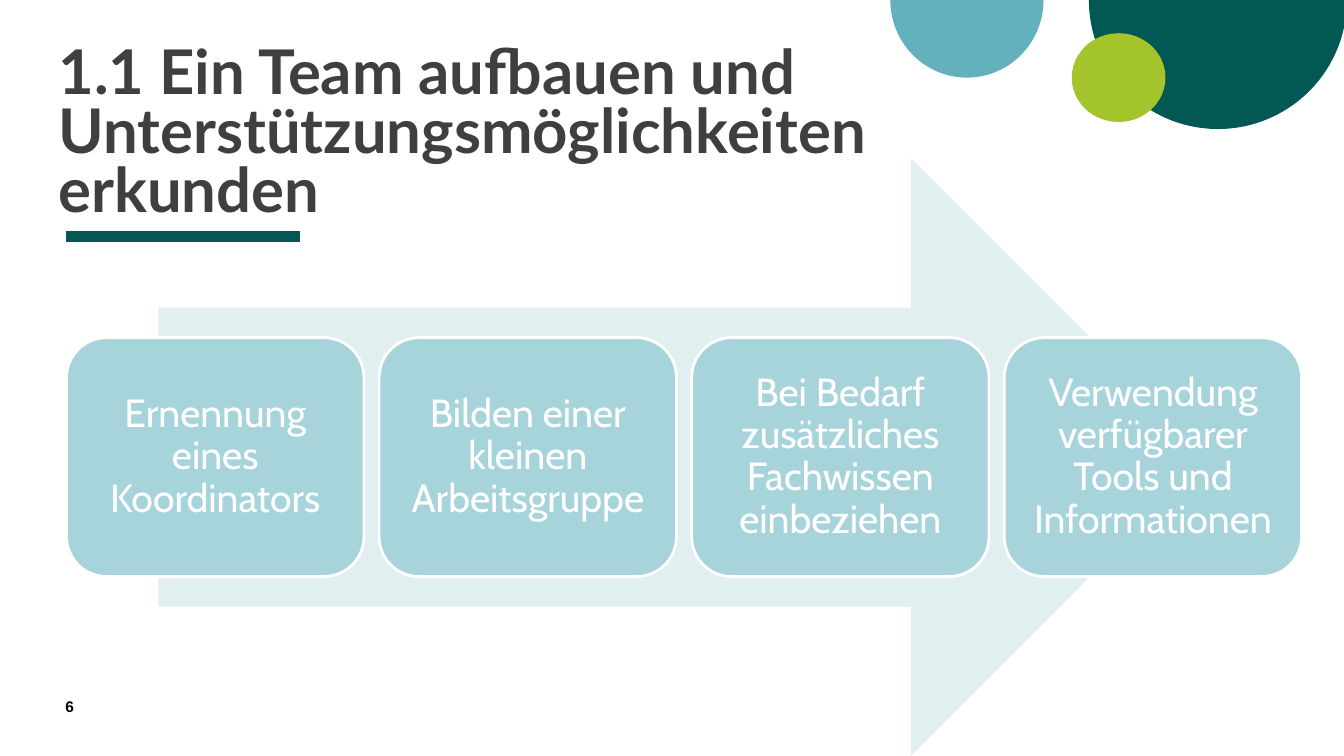
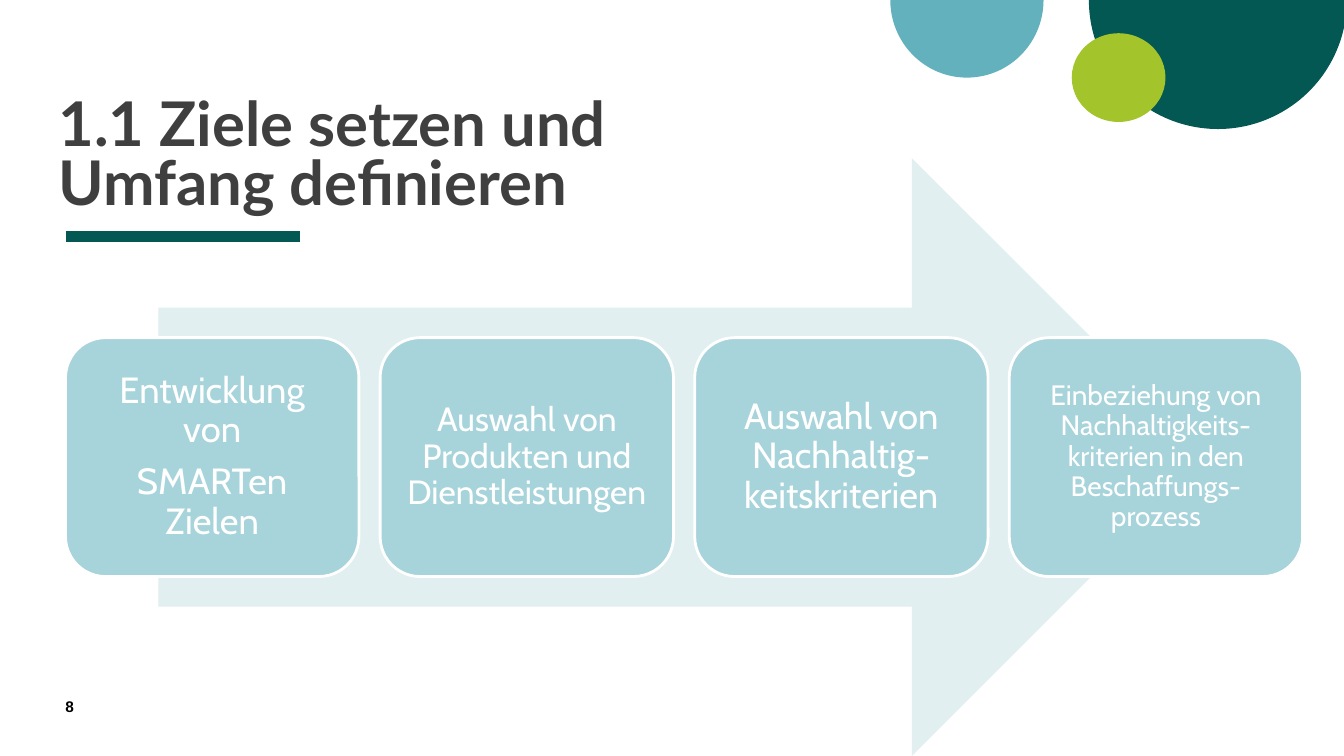
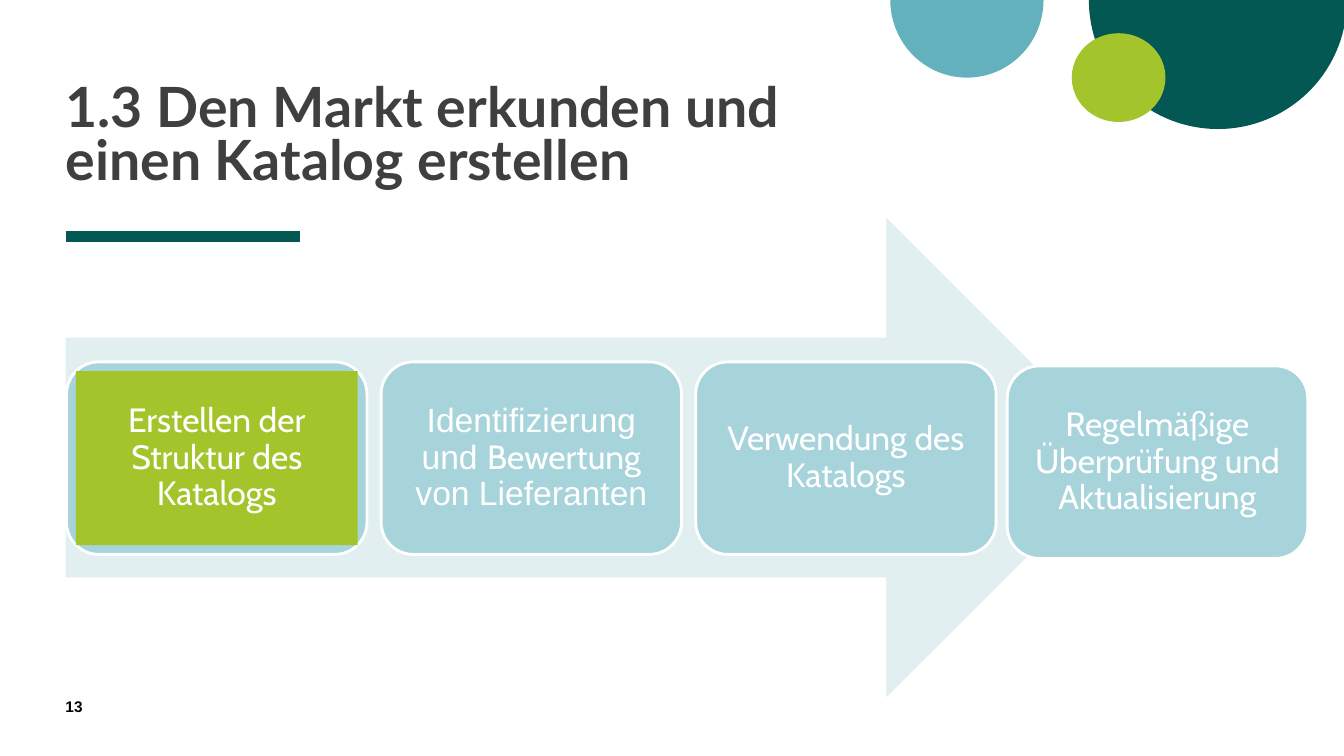
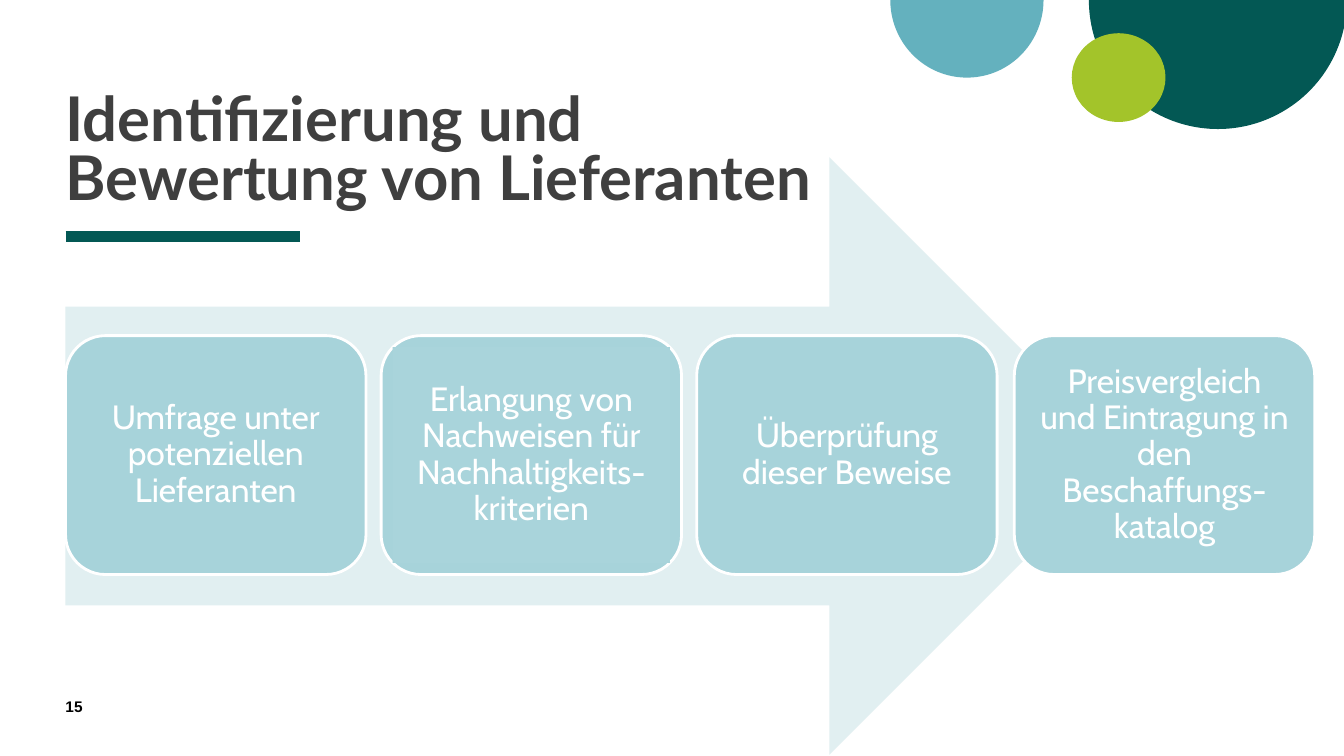
from dataclasses import dataclass
from typing import Optional

from lxml.etree import SubElement
from pptx import Presentation
from pptx.dml.color import RGBColor
from pptx.enum.shapes import MSO_CONNECTOR, MSO_SHAPE as Geo
from pptx.enum.text import MSO_ANCHOR as Anchor, MSO_AUTO_SIZE, PP_ALIGN as Align
from pptx.oxml.ns import qn
from pptx.util import Inches, Pt

WHITE = "FFFFFF"
BLACK = "000000"
GREY = "3F3F3F"
DARK = "035854"
TEAL = "64B1BE"
LIME = "A3C42A"
PALE = "E1EFF1"
CARD = "A7D3DA"
CARD_PANEL = "A9D4DB"
CORNER = 0.167
PANEL_INSET = CORNER * 0.29
TEXT_INSET = 0.11


@dataclass(frozen=True)
class Box:
    x: float
    y: float
    w: float
    h: float

    def inset(self, d: float) -> "Box":
        return Box(self.x + d, self.y + d, self.w - 2 * d, self.h - 2 * d)


@dataclass(frozen=True)
class Span:
    text: str
    font: str = "Cabin"


@dataclass(frozen=True)
class Card:
    paras: tuple[tuple[Span, ...], ...]
    size: float = 24
    panel: Optional[str] = None
    dx: float = 0
    dy: float = 0


@dataclass(frozen=True)
class Process:
    number: int
    title: str
    title_box: Box
    arrow: Box
    first: Box
    pitch: float
    cards: tuple[Card, ...]
    title_size: float = 44


def card(*lines: str, size: float = 24, panel: Optional[str] = None,
         dx: float = 0, dy: float = 0) -> Card:
    return Card(tuple((Span(t),) for t in lines), size, panel, dx, dy)


PROCESSES = (
    Process(
        6, "1.1 Ein Team aufbauen und Unterstützungsmöglichkeiten erkunden",
        Box(0.58, 0.17, 8.72, 2.06), Box(1.57, 1.57, 10.43, 5.93),
        Box(0.66, 3.35, 2.95, 2.37), 3.1,
        (
            card("Ernennung eines Koordinators", size=28),
            card("Bilden einer kleinen Arbeitsgruppe", size=28),
            card("Bei Bedarf zusätzliches Fachwissen einbeziehen", size=28),
            card("Verwendung verfügbarer Tools und Informationen", size=28),
        ),
    ),
    Process(
        8, "1.1 Ziele setzen und Umfang definieren",
        Box(0.58, 0.42, 7.42, 1.74), Box(1.57, 1.57, 10.44, 5.93),
        Box(0.65, 3.35, 2.91, 2.37), 3.12,
        (
            card("Entwicklung von", "SMARTen Zielen", size=26),
            card("Auswahl von Produkten und Dienstleistungen"),
            card("Auswahl von Nachhaltig-keitskriterien", size=26),
            card("Einbeziehung von Nachhaltigkeits-kriterien in den "
                 "Beschaffungs-prozess", size=20),
        ),
    ),
    Process(
        13, "1.3 Den Markt erkunden und einen Katalog erstellen",
        Box(0.65, 0.75, 7.42, 1.15), Box(0.65, 2.16, 10.52, 4.76),
        Box(0.66, 3.59, 2.98, 1.91), 3.12,
        (
            card("Erstellen der Struktur des Katalogs", panel=LIME),
            Card(((Span("Identifizierung und ", "Arial"), Span("Bewertung"),
                   Span(" von Lieferanten", "Arial")),)),
            card("Verwendung des Katalogs"),
            card("Regelmäßige Überprüfung und Aktualisierung", dx=-0.03, dy=0.04),
        ),
        39.6,
    ),
    Process(
        15, "Identifizierung und Bewertung von Lieferanten",
        Box(0.65, 0.37, 7.42, 1.74), Box(0.65, 1.56, 10.54, 5.93),
        Box(0.65, 3.33, 2.98, 2.37), 3.13,
        (
            card("Umfrage unter potenziellen Lieferanten"),
            card("Erlangung von Nachweisen für Nachhaltigkeits-kriterien",
                 panel=CARD_PANEL),
            card("Überprüfung dieser Beweise"),
            card("Preisvergleich und Eintragung in den Beschaffungs-katalog",
                 dx=0.02),
        ),
    ),
)


def rgb(color: str) -> RGBColor:
    return RGBColor.from_string(color)


def emu(box: Box) -> tuple[Inches, ...]:
    return tuple(Inches(v) for v in (box.x, box.y, box.w, box.h))


def add_shape(s, geo, box: Box, fill: str, line: Optional[str] = None,
              adj: tuple[float, ...] = ()):
    sp = s.shapes.add_shape(geo, *emu(box))
    sp.shadow.inherit = False
    sp.fill.solid()
    sp.fill.fore_color.rgb = rgb(fill)
    if line:
        sp.line.color.rgb = rgb(line)
        sp.line.width = Pt(2)
    else:
        sp.line.fill.background()
    for i, value in enumerate(adj):
        sp.adjustments[i] = value
    return sp


def set_frame(tf, inset: float, anchor) -> None:
    tf.word_wrap = True
    tf.auto_size = MSO_AUTO_SIZE.NONE
    tf.vertical_anchor = anchor
    tf.margin_left = tf.margin_right = Inches(inset)
    tf.margin_top = tf.margin_bottom = Inches(inset)


def add_run(p, text: str, font: str, size: float, color: str, bold: bool = False) -> None:
    r = p.add_run()
    r.text = text
    r.font.name = font
    r.font.size = Pt(size)
    r.font.bold = bold
    r.font.color.rgb = rgb(color)


def add_decoration(s, layout) -> None:
    big = add_shape(s, Geo.PIE, Box(10.8, -1.28, 2.56, 2.56), DARK, adj=(0, 107.956))
    rule = s.shapes.add_connector(MSO_CONNECTOR.STRAIGHT, Inches(0.65), Inches(2.35),
                                  Inches(2.98), Inches(2.35))
    rule.line.color.rgb = rgb(DARK)
    rule.line.width = Pt(8)
    SubElement(rule.element.spPr, qn("a:effectLst"))
    mid = add_shape(s, Geo.PIE, Box(8.83, -0.77, 1.52, 1.54), TEAL, adj=(0, 108.518))
    small = add_shape(s, Geo.OVAL, Box(10.63, 0.33, 0.93, 0.88), LIME)
    for sp in (big, rule, mid, small):
        layout.shapes.element.append(sp.element)


def add_title(s, process: Process) -> None:
    title = s.shapes.title
    title.left, title.top, title.width, title.height = emu(process.title_box)
    set_frame(title.text_frame, 0, Anchor.BOTTOM)
    p = title.text_frame.paragraphs[0]
    p.alignment = Align.LEFT
    p.line_spacing = 0.8
    add_run(p, process.title, "Lato", process.title_size, GREY, True)


def add_number(s, number: int) -> None:
    tf = s.shapes.add_textbox(*emu(Box(0.65, 6.92, 0.57, 0.27))).text_frame
    set_frame(tf, 0, Anchor.TOP)
    add_run(tf.paragraphs[0], str(number), "Arial", 11, BLACK, True)


def add_card(s, item: Card, box: Box) -> None:
    sp = add_shape(s, Geo.ROUNDED_RECTANGLE, box, CARD, WHITE, (CORNER,))
    if item.panel:
        sp = add_shape(s, Geo.RECTANGLE, box.inset(PANEL_INSET * box.h), item.panel)
    tf = sp.text_frame
    set_frame(tf, TEXT_INSET, Anchor.MIDDLE)
    for i, spans in enumerate(item.paras):
        p = tf.add_paragraph() if i else tf.paragraphs[0]
        p.alignment = Align.CENTER
        p.line_spacing = 0.9
        if i:
            p.space_before = Pt(9.1)
        for span in spans:
            add_run(p, span.text, span.font, item.size, WHITE)


def add_process(s, process: Process) -> None:
    add_title(s, process)
    add_number(s, process.number)
    add_shape(s, Geo.RIGHT_ARROW, process.arrow, PALE, adj=(0.5, 0.5))
    first = process.first
    for i, item in enumerate(process.cards):
        x = first.x + i * process.pitch + item.dx
        add_card(s, item, Box(x, first.y + item.dy, first.w, first.h))


def main() -> None:
    prs = Presentation()
    prs.slide_width = Inches(13.33)
    prs.slide_height = Inches(7.5)
    layout = prs.slide_layouts[5]
    for ph in list(layout.placeholders):
        if ph.placeholder_format.idx:
            layout.shapes.element.remove(ph.element)
    for i, process in enumerate(PROCESSES):
        s = prs.slides.add_slide(layout)
        if i == 0:
            add_decoration(s, layout)
        add_process(s, process)
    prs.save("out.pptx")


if __name__ == "__main__":
    main()
